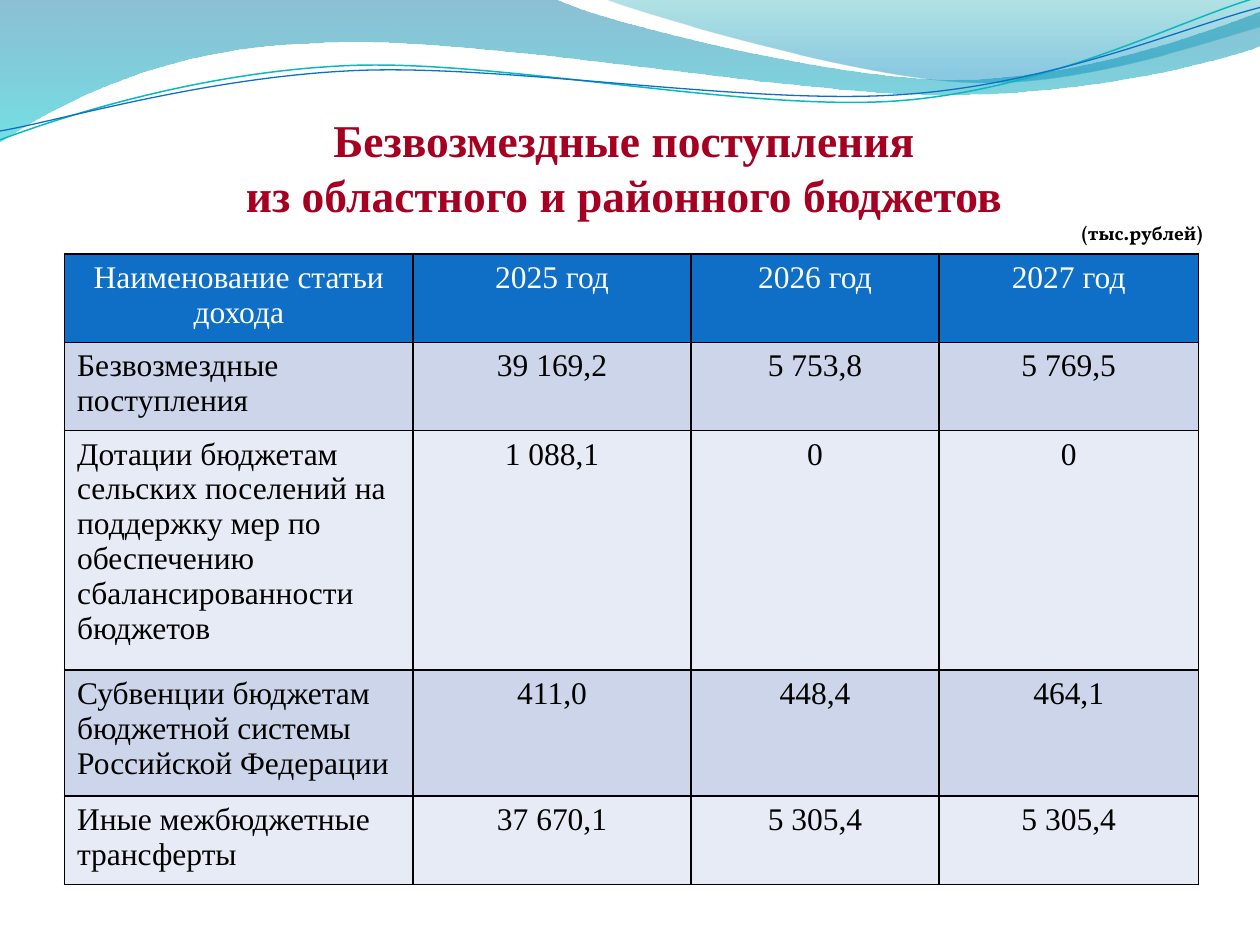
from math import cos, radians, sin

from lxml.etree import SubElement
from pptx import Presentation
from pptx.dml.color import RGBColor
from pptx.enum.text import MSO_ANCHOR as Anchor, MSO_AUTO_SIZE as Fit, PP_ALIGN as Align
from pptx.oxml.ns import qn
from pptx.util import Cm, Pt

HUES = {
    "title": "A50021", "ink": "000000", "white": "FFFFFF", "head": "0F6FC6",
    "odd": "CCD5EA", "even": "E7EBF5", "teal": "0AB8BF", "blue": "0F6FC6",
    "deep": "0074A1", "aqua": "00C6CF", "sea": "00A1A9", "sky": "008BBF",
}
SERIF = "Times New Roman"
TILT = -2.7

# Each path is a list of steps in tenths of the box width:
# two numbers are a point, six are a cubic curve.
BANDS = [
    ([(0, 0), (4.4, -.01), (4.76, .17, 6.64, .63, 7.58, .63),
      (8.53, .63, 9.58, .26, 10, .09), (10.01, .36),
      (9.83, .44, 8.7, .76, 7.46, .75), (6.22, .75, 3.82, .28, 2.57, .34),
      (1.29, .36, .46, .83, -.01, 1.13)],
     [(0, "deep", 45), (1, "aqua", 55)]),
    ([(4.79, -.01), (5.09, .11, 6.82, .62, 7.69, .65),
      (8.56, .69, 9.61, .32, 10, .21), (10, 0)],
     [(0, "sea", 30), (.8, "sky", 45)]),
]
LINES = [
    ([(0, 1.11), (.48, .93, 1.58, .57, 2.77, .52),
      (3.95, .47, 5.93, .89, 7.13, .8), (8.33, .71, 9.38, .15, 9.98, -.02)],
     (4.99, .58), "teal", .85),
    ([(0, 1.04), (.47, .96, 1.64, .61, 2.83, .56),
      (4.03, .51, 5.97, .84, 7.17, .75), (8.36, .67, 9.41, .21, 10, .06)],
     (5, .59), "blue", .75),
]
TITLE = [
    ("Безвозмездные поступления ", Align.CENTER, 26, SERIF, "title"),
    ("из областного и районного бюджетов ", Align.CENTER, 26, SERIF, "title"),
    ("(тыс.рублей)", Align.RIGHT, 11, "Vollkorn", "ink"),
]
ROWS = [
    ("Наименование статьи дохода", "2025 год", "2026 год", "2027 год"),
    ("Безвозмездные поступления", "39 169,2", "5 753,8", "5 769,5"),
    ("Дотации бюджетам сельских поселений на поддержку мер по обеспечению "
     "сбалансированности бюджетов", "1 088,1", "0", "0"),
    ("Субвенции бюджетам бюджетной системы Российской Федерации",
     "411,0", "448,4", "464,1"),
    ("Иные межбюджетные трансферты", "37 670,1", "5 305,4", "5 305,4"),
]
WIDTHS = (7.03, 5.6, 5, 5.23)
HEIGHTS = (1.78, 1.78, 4.82, 2.54, 1.78)


def rgb(name):
    return RGBColor.from_string(HUES[name])


def add_run(para, text, size, font, hue, bold=False):
    run = para.add_run()
    run.text = text
    run.font.size, run.font.name, run.font.bold = Pt(size), font, bold
    run.font.color.rgb = rgb(hue)


def turn(steps, mid, angle):
    """Rotate all points of a path about mid."""
    c, s = cos(radians(angle)), sin(radians(angle))
    out = []
    for step in steps:
        flat = []
        for x, y in zip(step[::2], step[1::2]):
            dx, dy = x - mid[0], y - mid[1]
            flat += [mid[0] + dx * c - dy * s, mid[1] + dx * s + dy * c]
        out.append(flat)
    return out


def add_path(slide, box, steps, close):
    """Draw a path through all points, then join triples into curves."""
    left, top, width, _ = box
    unit = width / 10
    pts = [(left + x * unit, top + y * unit)
           for step in steps for x, y in zip(step[::2], step[1::2])]
    pen = slide.shapes.build_freeform(*pts[0], scale=1.0)
    pen.add_line_segments(pts[1:], close=close)
    shape = pen.convert_to_shape()
    shape.shadow.inherit = False
    nodes = iter(list(shape.element.iter(qn("a:lnTo"))))
    for step in steps[1:]:
        first = next(nodes)
        if len(step) == 6:
            curve = first.makeelement(qn("a:cubicBezTo"))
            first.addprevious(curve)
            for node in (first, next(nodes), next(nodes)):
                curve.append(node[0])
                node.getparent().remove(node)
    return shape


def add_waves(slide, box):
    for steps, stops in BANDS:
        band = add_path(slide, box, steps, True)
        band.line.fill.background()
        band.fill.gradient()
        band.fill.gradient_angle = 270
        for stop, (pos, hue, _) in zip(band.fill.gradient_stops, stops):
            stop.position, stop.color.rgb = pos, rgb(hue)
        for node, (_, _, alpha) in zip(band.element.iter(qn("a:srgbClr")), stops):
            SubElement(node, qn("a:alpha"), val=str(alpha * 1000))
    for steps, mid, hue, size in LINES:
        wave = add_path(slide, box, turn(steps, mid, -TILT), False)
        wave.rotation = TILT
        wave.fill.background()
        wave.line.color.rgb, wave.line.width = rgb(hue), Pt(size)


def add_title(slide, box):
    title = slide.shapes.title
    title.left, title.top, title.width, title.height = box
    title.element.getparent().append(title.element)  # in front of the waves
    frame = title.text_frame
    frame.word_wrap, frame.vertical_anchor = True, Anchor.TOP
    frame.auto_size = Fit.SHAPE_TO_FIT_TEXT
    for i, (text, align, *look) in enumerate(TITLE):
        para = frame.add_paragraph() if i else frame.paragraphs[0]
        para.alignment, para.line_spacing = align, 1.0
        para.space_before = Pt(0)
        add_run(para, text, *look, bold=True)


def set_edges(cell):
    props = cell._tc.get_or_add_tcPr()
    for i, side in enumerate(("lnL", "lnR", "lnT", "lnB")):
        edge = props.makeelement(qn("a:" + side), w=str(Pt(1)))
        fill = SubElement(edge, qn("a:solidFill"))
        SubElement(fill, qn("a:srgbClr"), val=HUES["ink"])
        props.insert(i, edge)


def add_grid(slide, box):
    table = slide.shapes.add_table(len(ROWS), len(WIDTHS), *box).table
    for col, width in zip(table.columns, WIDTHS):
        col.width = Cm(width)
    for r, (row, height) in enumerate(zip(ROWS, HEIGHTS)):
        table.rows[r].height = Cm(height)
        back = "head" if r == 0 else "odd" if r % 2 else "even"
        for c, text in enumerate(row):
            cell = table.cell(r, c)
            cell.fill.solid()
            cell.fill.fore_color.rgb = rgb(back)
            set_edges(cell)
            para = cell.text_frame.paragraphs[0]
            para.alignment = Align.LEFT if r and not c else Align.CENTER
            add_run(para, text, 18, SERIF, "ink" if r else "white")


def main():
    deck = Presentation()
    deck.slide_width, deck.slide_height = Cm(25.4), Cm(19.05)
    slide = deck.slides.add_slide(deck.slide_layouts[5])
    add_waves(slide, (0, 0, deck.slide_width, Cm(2.87)))
    add_title(slide, (Cm(0.9), Cm(2.13), Cm(23.6), Cm(2.95)))
    add_grid(slide, (Cm(1.3), Cm(5.12), Cm(sum(WIDTHS)), Cm(sum(HEIGHTS))))
    deck.save("out.pptx")


if __name__ == "__main__":
    main()
